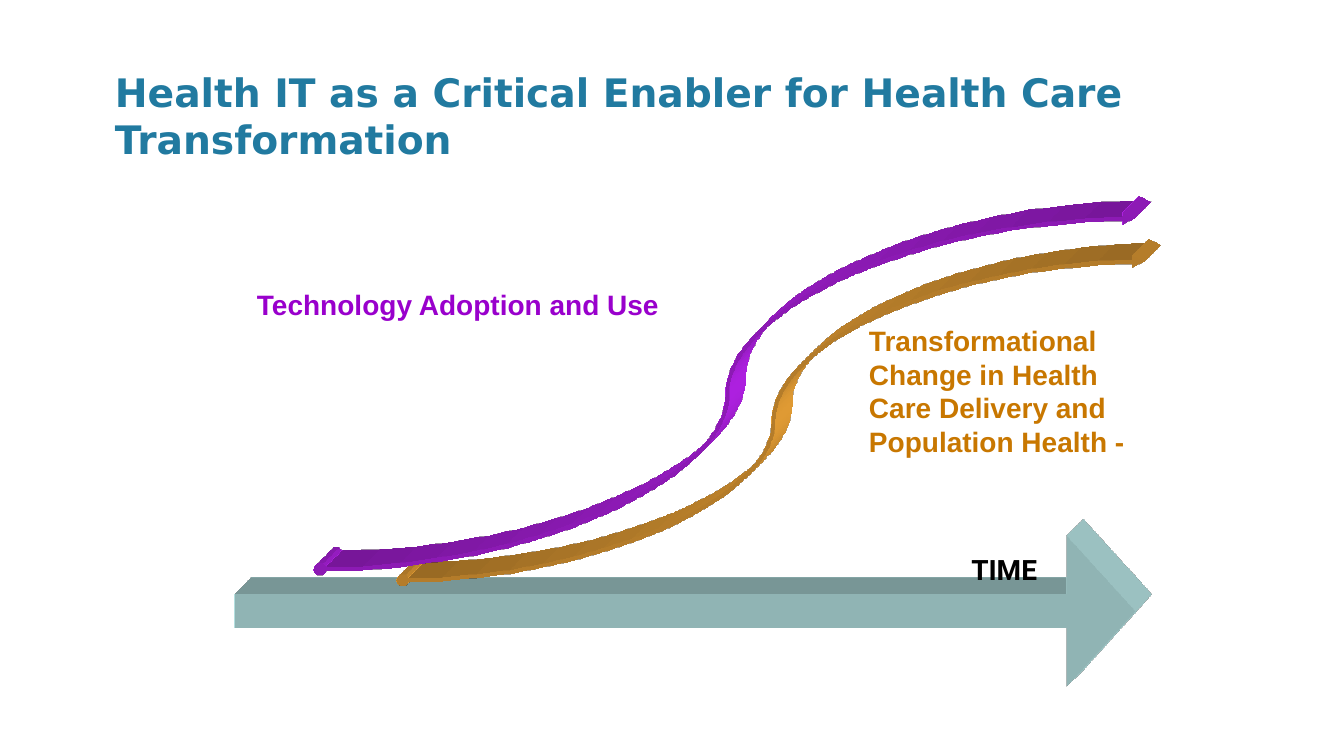
from dataclasses import dataclass

from lxml import etree
from pptx import Presentation
from pptx import util as u
from pptx.dml.color import RGBColor
from pptx.enum import shapes, text
from pptx.oxml.ns import qn


@dataclass(frozen=True)
class Theme:
    title: str = "217AA0"
    time_arrow: str = "CCFFFF"
    technology: str = "9900CC"
    technology_curve: str = "C625FF"
    change: str = "C87700"
    change_curve: str = "FFB03B"
    black: str = "000000"
    title_size: int = 28
    label_size: int = 20
    curve_width: int = 3


@dataclass(frozen=True)
class Box:
    left: float
    top: float
    width: float
    height: float

    def lengths(self) -> tuple:
        return tuple(u.Inches(n) for n in (self.left, self.top, self.width, self.height))


@dataclass(frozen=True)
class Label:
    wording: str
    box: Box
    color: str
    font: str = "Arial"
    align: text.PP_ALIGN = text.PP_ALIGN.LEFT


@dataclass(frozen=True)
class Curve:
    start: tuple[float, float]
    end: tuple[float, float]
    color: str


THEME = Theme()
TITLE = "Health IT as a Critical Enabler for Health Care Transformation"
TITLE_BOX = Box(1.04, 0.63, 11.62, 0.88)
TIME_BOX = Box(2.33, 5.31, 8.92, 1.5)
CURVES = [
    Curve((11.34, 2.59), (4, 5.75), THEME.change_curve),
    Curve((11.25, 2.17), (3.17, 5.65), THEME.technology_curve),
]
LABELS = [
    Label("TIME", Box(9, 5.43, 1.92, 0.43), THEME.black, "Roboto", text.PP_ALIGN.CENTER),
    Label("Transformational Change in Health Care Delivery and Population Health -",
          Box(8.52, 3.16, 2.89, 1.45), THEME.change),
    Label("Technology Adoption and Use", Box(2.45, 2.8, 4.4, 0.43), THEME.technology),
]


def write(shape, wording: str, *, size: int, color: str, font: str,
          align: text.PP_ALIGN = text.PP_ALIGN.LEFT) -> None:
    frame = shape.text_frame
    frame.word_wrap = True
    frame.auto_size = text.MSO_AUTO_SIZE.NONE
    frame.vertical_anchor = text.MSO_ANCHOR.TOP
    frame.text = wording
    paragraph = frame.paragraphs[0]
    paragraph.alignment = align
    paragraph.font.size = u.Pt(size)
    paragraph.font.name = font
    paragraph.font.bold = True
    paragraph.font.color.rgb = RGBColor.from_string(color)


def extrude(shape, color: str, depth: float) -> None:
    properties = shape.element.spPr
    if properties.find(qn("a:effectLst")) is None:
        etree.SubElement(properties, qn("a:effectLst"))
    scene = etree.SubElement(properties, qn("a:scene3d"))
    etree.SubElement(scene, qn("a:camera"), prst="legacyObliqueTopRight")
    etree.SubElement(scene, qn("a:lightRig"), rig="legacyFlat3", dir="b")
    solid = etree.SubElement(properties, qn("a:sp3d"),
                             extrusionH=str(u.Inches(depth)), prstMaterial="legacyMatte")
    extrusion = etree.SubElement(solid, qn("a:extrusionClr"))
    etree.SubElement(extrusion, qn("a:srgbClr"), val=color)


def add_time_arrow(slide) -> None:
    arrow = slide.shapes.add_shape(shapes.MSO_SHAPE.RIGHT_ARROW, *TIME_BOX.lengths())
    arrow.adjustments[0] = 0.227
    arrow.adjustments[1] = 0.455
    arrow.shadow.inherit = False
    arrow.fill.solid()
    arrow.fill.fore_color.rgb = RGBColor.from_string(THEME.time_arrow)
    arrow.line.fill.background()
    extrude(arrow, THEME.time_arrow, 0.47)


def add_curve(slide, curve: Curve) -> None:
    ends = (u.Inches(n) for n in curve.start + curve.end)
    connector = slide.shapes.add_connector(shapes.MSO_CONNECTOR.CURVE, *ends)
    connector.line.color.rgb = RGBColor.from_string(curve.color)
    connector.line.width = u.Pt(THEME.curve_width)
    line = connector.line._get_or_add_ln()
    etree.SubElement(line, qn("a:headEnd"), type="triangle")
    etree.SubElement(line, qn("a:tailEnd"), type="oval")
    extrude(connector, curve.color, 0.47)


def add_label(slide, label: Label) -> None:
    write(slide.shapes.add_textbox(*label.box.lengths()), label.wording,
          size=THEME.label_size, color=label.color, font=label.font, align=label.align)


def main() -> None:
    presentation = Presentation()
    presentation.slide_width = u.Inches(13.33)
    presentation.slide_height = u.Inches(7.5)
    slide = presentation.slides.add_slide(presentation.slide_layouts[5])
    title = slide.shapes.title
    title.left, title.top, title.width, title.height = TITLE_BOX.lengths()
    write(title, TITLE, size=THEME.title_size, color=THEME.title, font="DejaVu Sans")
    add_time_arrow(slide)
    for curve in CURVES:
        add_curve(slide, curve)
    for label in LABELS:
        add_label(slide, label)
    presentation.save("out.pptx")


if __name__ == "__main__":
    main()
